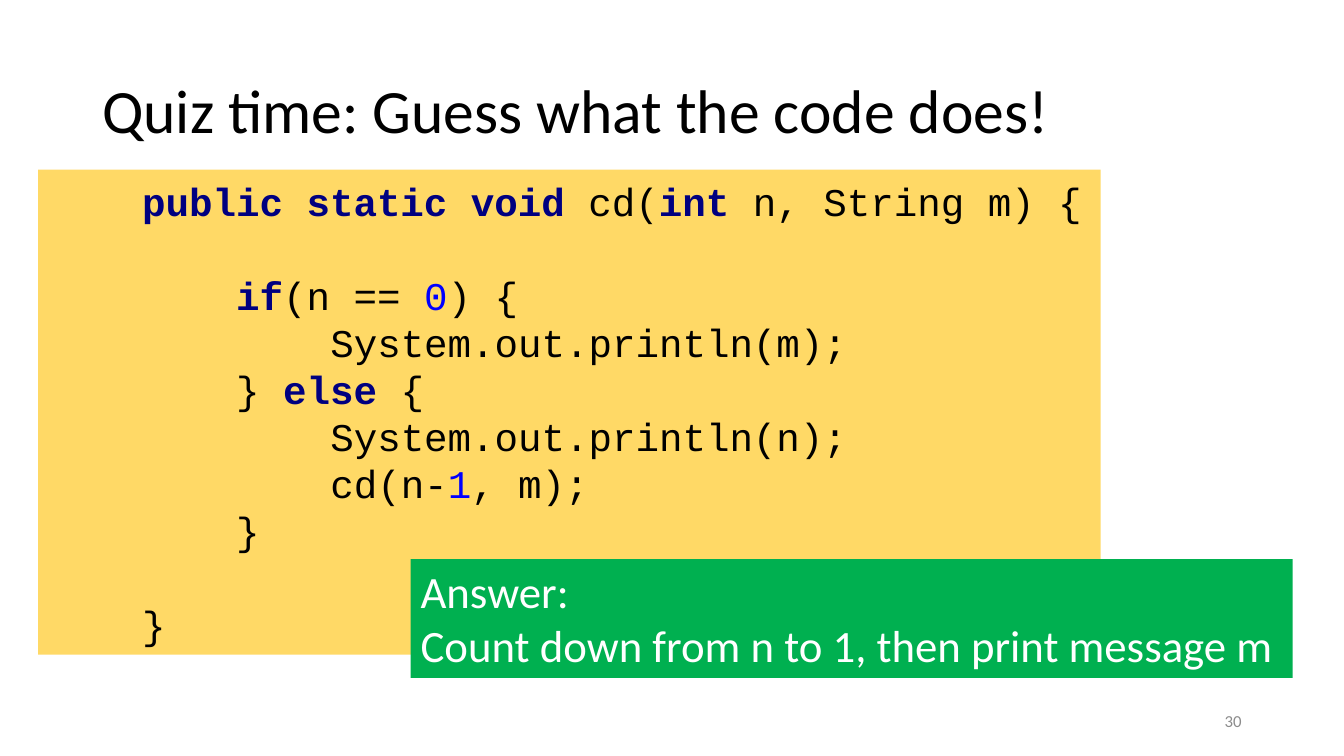
import pptx
import pptx.util
import pptx.dml.color
import pptx.enum.shapes
import pptx.enum.text

Pt = pptx.util.Pt
ALIGN = pptx.enum.text.PP_ALIGN
ANCHOR = pptx.enum.text.MSO_ANCHOR

COLORS = {
    "ink": "000000", "key": "000080", "num": "0000FF", "gray": "8C8C8C",
    "code": "FFD966", "answer": "00B050", "white": "FFFFFF",
}
SIZE = (960, 540)
TITLE = "Quiz time: Guess what the code does!"
NUMBER = "30"
ANSWER = ["Answer:", "Count down from n to 1, then print message m"]
CODE = [
    (1, 0, [("public static void ", "key"), ("cd(", "ink"),
            ("int ", "key"), ("n, String m) {", "ink")]),
    (2, 1, [("if", "key"), ("(n == ", "ink"), ("0", "num"), (") {", "ink")]),
    (3, 0, [("System.out.println(m);", "ink")]),
    (2, 0, [("} ", "ink"), ("else ", "key"), ("{", "ink")]),
    (3, 0, [("System.out.println(n);", "ink")]),
    (3, 0, [("cd(n-", "ink"), ("1", "num"), (", m);", "ink")]),
    (2, 0, [("}", "ink")]),
    (1, 1, [("}", "ink")]),
]
CODE_SIZE = 28
LINE = CODE_SIZE * 1.2
INDENT = CODE_SIZE * 0.6 * 4


def tint(name):
    return pptx.dml.color.RGBColor.from_string(COLORS[name])


def add_box(slide, place, fill=None, anchor=ANCHOR.MIDDLE):
    spot = [Pt(v) for v in place]
    if fill:
        box = slide.shapes.add_shape(
            pptx.enum.shapes.MSO_SHAPE.RECTANGLE, *spot)
        box.shadow.inherit = False
        box.fill.solid()
        box.fill.fore_color.rgb = tint(fill)
        box.line.fill.background()
    else:
        box = slide.shapes.add_textbox(*spot)
    frame = box.text_frame
    frame.word_wrap = True
    frame.vertical_anchor = anchor
    return frame


def add_line(frame, index, runs, size, font="Calibri", align=ALIGN.LEFT):
    line = frame.add_paragraph() if index else frame.paragraphs[0]
    line.alignment = align
    for text, color in runs:
        run = line.add_run()
        run.text = text
        run.font.name = font
        run.font.size = Pt(size)
        run.font.bold = color == "key"
        run.font.color.rgb = tint(color)
    return line


def main():
    """Build the quiz slide and save it."""
    deck = pptx.Presentation()
    deck.slide_width, deck.slide_height = [Pt(v) for v in SIZE]
    slide = deck.slides.add_slide(deck.slide_layouts[6])

    title = add_box(slide, (66, 28.75, 828, 104.4))
    add_line(title, 0, [(TITLE, "ink")], 44).line_spacing = 0.9

    number = add_box(slide, (678, 500.5, 216, 28.75))
    add_line(number, 0, [(NUMBER, "gray")], 12, align=ALIGN.RIGHT)

    code = add_box(slide, (27.3, 121.2, 758.9, 346.4), "code")
    for i, (depth, gap, runs) in enumerate(CODE):
        line = add_line(code, i, runs, CODE_SIZE, "Courier New")
        line.line_spacing = Pt(LINE)
        line.space_before = Pt(gap * LINE)
        line._p.get_or_add_pPr().set("marL", str(Pt(depth * INDENT)))

    answer = add_box(slide, (293.3, 399.4, 630, 84.8), "answer", ANCHOR.TOP)
    for i, text in enumerate(ANSWER):
        add_line(answer, i, [(text, "white")], 32)

    deck.save("out.pptx")


if __name__ == "__main__":
    main()
